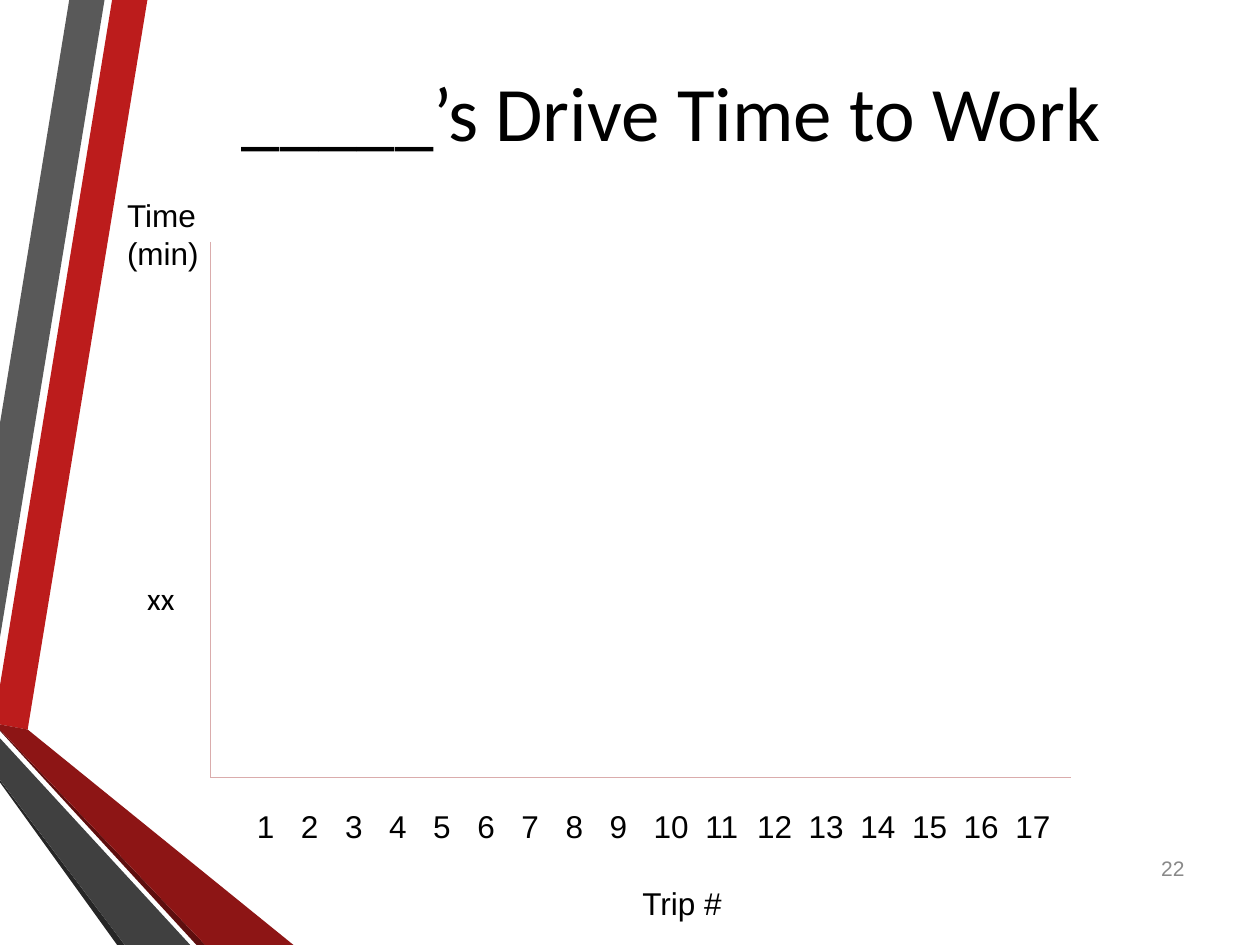
from lxml.etree import SubElement
from pptx import Presentation
from pptx.dml.color import RGBColor
from pptx.enum.shapes import MSO_CONNECTOR
from pptx.enum.text import MSO_ANCHOR, MSO_AUTO_SIZE, PP_ALIGN
from pptx.oxml.ns import qn
from pptx.util import Inches, Pt

# Corner points in hundredths of an inch
RIBBONS = [
    ("BC1C1C", [(0, 544), (0, 575), (22, 579), (117, 0), (89, 0)]),
    ("595959", [(83, 0), (55, 0), (0, 336), (0, 506)]),
    ("262626", [(0, 619), (0, 621), (93, 750), (99, 750)]),
    ("5E0E0E", [(0, 579), (0, 580), (156, 750), (163, 750)]),
    ("8D1515", [(0, 579), (163, 750), (233, 750), (22, 579), (0, 575)]),
    ("404040", [(0, 619), (99, 750), (151, 750), (0, 586)]),
]
AXIS_LEFT, AXIS_TOP, AXIS_RIGHT, AXIS_BOTTOM = 1.67, 1.92, 8.5, 6.17
TRIP_COUNT = 17


def color(hex_string):
    return RGBColor.from_string(hex_string)


def place(shape, left, top, width, height):
    bounds = {"left": left, "top": top, "width": width, "height": height}
    for name, value in bounds.items():
        setattr(shape, name, Inches(value))


def write(shape, text, size=18, font="Arial", hex_color="000000",
          align=PP_ALIGN.LEFT, **frame_format):
    """Fill a shape with one formatted paragraph and return the paragraph."""
    for name, value in frame_format.items():
        setattr(shape.text_frame, name, value)
    paragraph = shape.text_frame.paragraphs[0]
    paragraph.alignment = align
    run = paragraph.add_run()
    run.text = text
    for name, value in {"size": Pt(size), "name": font}.items():
        setattr(run.font, name, value)
    run.font.color.rgb = color(hex_color)
    return paragraph


def add_label(slide, text, bounds, word_wrap=False, **text_format):
    shape = slide.shapes.add_textbox(*map(Inches, bounds))
    return write(shape, text, word_wrap=word_wrap, **text_format)


def add_ribbon(slide, hex_color, points):
    builder = slide.shapes.build_freeform(*points[0], scale=Inches(0.01))
    builder.add_line_segments(points[1:], close=True)
    shape = builder.convert_to_shape()
    shape.shadow.inherit = False
    shape.fill.solid()
    shape.fill.fore_color.rgb = color(hex_color)
    shape.line.fill.background()


def add_axis(slide, *ends):
    line = slide.shapes.add_connector(MSO_CONNECTOR.STRAIGHT, *map(Inches, ends))
    line.line.color.rgb = color("DAACAC")
    line.line.width = Pt(0.75)
    SubElement(line._element.spPr, qn("a:effectLst"))


def add_trip_numbers(slide):
    """Set the trip numbers on tab stops, wider apart from two digits on."""
    numbers = range(1, TRIP_COUNT + 1)
    paragraph = add_label(slide, "\t".join(map(str, numbers)), (1.94, 6.36, 6.56, 0.4))
    tab_list = SubElement(paragraph._p.get_or_add_pPr(), qn("a:tabLst"))
    position = 0
    for number in numbers[1:]:
        position += Inches(0.35 if number <= 10 else 0.41)
        SubElement(tab_list, qn("a:tab"), pos=str(position), algn="l")


def main():
    presentation = Presentation()
    presentation.slide_width, presentation.slide_height = Inches(10), Inches(7.5)
    slide = presentation.slides.add_slide(presentation.slide_layouts[5])

    for hex_color, points in RIBBONS:
        add_ribbon(slide, hex_color, points)

    title = slide.shapes.title
    place(title, 0.83, 0.46, 9, 1.25)
    write(title, "_____’s Drive Time to Work", size=44, font="Calibri",
          align=PP_ALIGN.CENTER, vertical_anchor=MSO_ANCHOR.TOP,
          auto_size=MSO_AUTO_SIZE.NONE)

    add_axis(slide, AXIS_LEFT, AXIS_TOP, AXIS_LEFT, AXIS_BOTTOM)
    add_axis(slide, AXIS_LEFT, AXIS_BOTTOM, AXIS_RIGHT, AXIS_BOTTOM)
    add_label(slide, "Time (min)", (0.91, 1.51, 0.85, 0.71), word_wrap=True)
    add_label(slide, "Trip #", (5, 6.97, 0.84, 0.4))
    add_trip_numbers(slide)
    add_label(slide, "xx", (1.07, 4.55, 0.43, 0.4), font="Calibri")
    add_label(slide, "22", (9.05, 6.69, 0.45, 0.4), size=12, hex_color="898989",
              align=PP_ALIGN.RIGHT, vertical_anchor=MSO_ANCHOR.MIDDLE)

    presentation.save("out.pptx")


if __name__ == "__main__":
    main()
